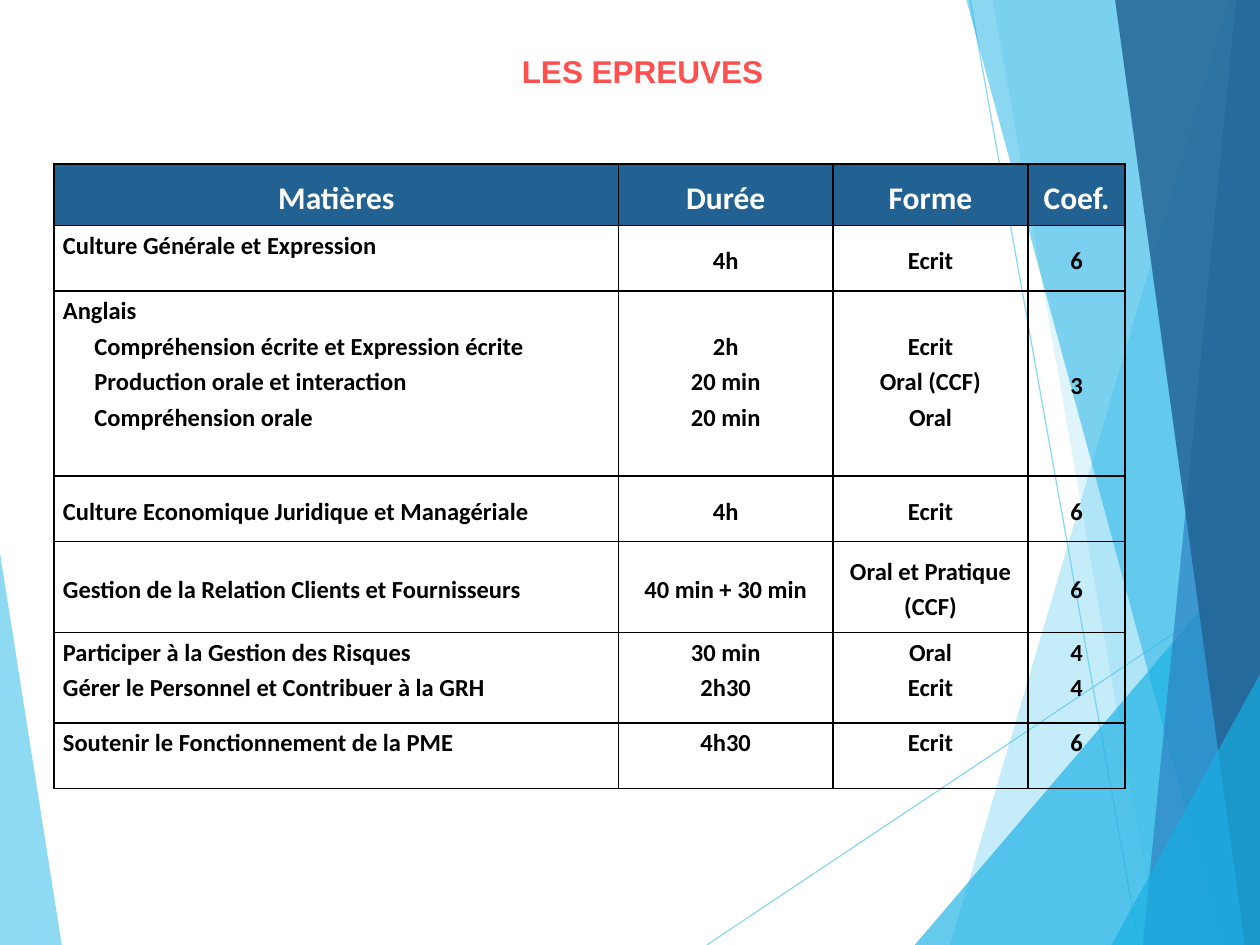
from collections import namedtuple
from dataclasses import dataclass

from pptx import Presentation
from pptx import util as u
from pptx.dml.color import RGBColor
from pptx.enum import shapes, text
from pptx.oxml.ns import qn
from lxml import etree

COLUMNS, ROWS = 100, 75
Box = namedtuple("Box", "left top width height")


@dataclass(frozen=True)
class Theme:
    """Hold the colours, fonts and type sizes of the slide."""
    sky: str = "5FCBEF"
    cyan: str = "17B0E4"
    blue: str = "2E83C3"
    navy: str = "226292"
    red: str = "FF5050"
    black: str = "000000"
    white: str = "FFFFFF"
    title_font: str = "Arial"
    table_font: str = "Calibri"
    large: int = 18
    body: int = 14
    hairline: float = 0.75
    border: float = 1
    line_spacing: float = 1.19


THEME = Theme()

FACETS = [
    (THEME.sky, 70, [(0, 43.9), (4.9, 75), (0, 75)]),
    (THEME.sky, 36, [(97.5, 0), (75.4, 75), (100, 75), (100, 0)]),
    (THEME.sky, 20, [(78.8, 0), (91.9, 75), (100, 75), (100, 0)]),
    (THEME.cyan, 66, [(72.6, 75), (100, 42.9), (100, 75)]),
    (THEME.cyan, 50, [(76.7, 0), (97, 75), (100, 75), (100, 0)]),
    (THEME.blue, 70, [(98.1, 0), (90.7, 75), (100, 75), (100, 0)]),
    (THEME.navy, 82, [(88.5, 0), (98.8, 75), (100, 75), (100, 0)]),
    (THEME.cyan, 66, [(88.2, 75), (100, 53.5), (100, 75)]),
]
RAYS = [((56.1, 75), (100, 45.7)), ((77, 0), (90.4, 75))]

COLUMN_WIDTHS = [4.48, 1.7, 1.55, 0.77]
ROW_HEIGHTS = [0.49, 0.52, 1.47, 0.52, 0.72, 0.72, 0.52]
TOP, MIDDLE = text.MSO_ANCHOR.TOP, text.MSO_ANCHOR.MIDDLE
HEADINGS = ["Matières", "Durée", "Forme", "Coef."]
EXAMS = [
    (["Culture Générale et Expression", "4h", "Ecrit", "6"], [TOP, MIDDLE, MIDDLE, MIDDLE]),
    (["Anglais\nCompréhension écrite et Expression écrite\n"
      "Production orale et interaction\nCompréhension orale",
      "2h\n20 min\n20 min", "Ecrit\nOral (CCF)\nOral", "3"], [TOP, TOP, TOP, MIDDLE]),
    (["Culture Economique Juridique et Managériale", "4h", "Ecrit", "6"], [MIDDLE] * 4),
    (["Gestion de la Relation Clients et Fournisseurs", "40 min + 30 min",
      "Oral et Pratique\n(CCF)", "6"], [MIDDLE] * 4),
    (["Participer à la Gestion des Risques\nGérer le Personnel et Contribuer à la GRH",
      "30 min\n2h30", "Oral\nEcrit", "4\n4"], [TOP] * 4),
    (["Soutenir le Fonctionnement de la PME", "4h30", "Ecrit", "6"], [TOP] * 4),
]
ENGLISH_ROW = 2
ENGLISH_LINE = 0.28


def grid_box(presentation, left, top, width, height):
    """Turn grid columns and rows into a box in slide units."""
    column, row = presentation.slide_width / COLUMNS, presentation.slide_height / ROWS
    return Box(round(left * column), round(top * row), round(width * column), round(height * row))


def place_in(box, point):
    """Return the position of a grid point inside the box."""
    return (round(box.left + point[0] * box.width / COLUMNS),
            round(box.top + point[1] * box.height / ROWS))


def set_font(paragraph, name, size, colour):
    """Give a paragraph its bold font."""
    font = paragraph.font
    font.name, font.size, font.bold = name, u.Pt(size), True
    font.color.rgb = RGBColor.from_string(colour)


def set_opacity(fill_parent, percent):
    """Make the solid colour below an element partly transparent."""
    colour = next(fill_parent.iter(qn("a:srgbClr")))
    etree.SubElement(colour, qn("a:alpha"), val=str(percent * 1000))


def draw_facet(slide, box, colour, opacity, points):
    """Draw one translucent polygon."""
    corners = [place_in(box, point) for point in points]
    builder = slide.shapes.build_freeform(*corners[0])
    builder.add_line_segments(corners[1:], close=True)
    facet = builder.convert_to_shape()
    facet.shadow.inherit = False
    facet.fill.solid()
    facet.fill.fore_color.rgb = RGBColor.from_string(colour)
    facet.line.fill.background()
    set_opacity(facet.fill._xPr, opacity)


def draw_ray(slide, box, start, end):
    """Draw one thin translucent line."""
    ray = slide.shapes.add_connector(
        shapes.MSO_CONNECTOR.STRAIGHT, *place_in(box, start), *place_in(box, end))
    ray.line.width = u.Pt(THEME.hairline)
    ray.line.color.rgb = RGBColor.from_string(THEME.sky)
    properties = ray._element.spPr
    set_opacity(properties, 70)
    etree.SubElement(properties, qn("a:effectLst"))


def draw_backdrop(slide, box):
    """Draw the left facet, the rays and the right facets."""
    draw_facet(slide, box, *FACETS[0])
    for start, end in RAYS:
        draw_ray(slide, box, start, end)
    for facet in FACETS[1:]:
        draw_facet(slide, box, *facet)


def place_title(slide, box):
    """Move and format the title placeholder."""
    title = slide.shapes.title
    title.left, title.top, title.width, title.height = box
    frame = title.text_frame
    frame.text = "LES EPREUVES"
    frame.word_wrap = False
    frame.auto_size = text.MSO_AUTO_SIZE.SHAPE_TO_FIT_TEXT
    paragraph = frame.paragraphs[0]
    paragraph.alignment = text.PP_ALIGN.CENTER
    set_font(paragraph, THEME.title_font, THEME.large, THEME.red)


def draw_borders(cell):
    """Draw the four borders of a cell."""
    properties = cell._tc.get_or_add_tcPr()
    for side in ("lnL", "lnR", "lnT", "lnB"):
        line = etree.SubElement(properties, qn(f"a:{side}"), w=str(u.Pt(THEME.border)))
        fill = etree.SubElement(line, qn("a:solidFill"))
        etree.SubElement(fill, qn("a:srgbClr"), val=THEME.black)


def fill_cell(cell, words, anchor, centred, heading):
    """Write and format one cell."""
    draw_borders(cell)
    if heading:
        cell.fill.solid()
        cell.fill.fore_color.rgb = RGBColor.from_string(THEME.navy)
    else:
        cell.fill.background()
    cell.margin_left = cell.margin_right = u.Inches(0.07)
    cell.margin_top = cell.margin_bottom = 0
    cell.vertical_anchor = anchor
    cell.text = words
    size, colour = (THEME.large, THEME.white) if heading else (THEME.body, THEME.black)
    for paragraph in cell.text_frame.paragraphs:
        paragraph.alignment = text.PP_ALIGN.CENTER if centred else text.PP_ALIGN.LEFT
        paragraph.line_spacing = THEME.line_spacing
        set_font(paragraph, THEME.table_font, size, colour)


def align_english_parts(table):
    """Indent the parts of the English exam and level the other columns with them."""
    for paragraph in table.cell(ENGLISH_ROW, 0).text_frame.paragraphs[1:]:
        properties = paragraph._p.get_or_add_pPr()
        properties.set("marL", str(u.Inches(0.5)))
        properties.set("indent", str(u.Inches(-0.25)))
    for column in (1, 2):
        table.cell(ENGLISH_ROW, column).margin_top = u.Inches(ENGLISH_LINE)


def draw_exam_table(slide, box):
    """Draw the table of exams in the box."""
    table = slide.shapes.add_table(len(ROW_HEIGHTS), len(COLUMN_WIDTHS), *box).table
    table.first_row = table.horz_banding = False
    for column, share in zip(table.columns, COLUMN_WIDTHS):
        column.width = round(box.width * share / sum(COLUMN_WIDTHS))
    for row, share in zip(table.rows, ROW_HEIGHTS):
        row.height = round(box.height * share / sum(ROW_HEIGHTS))
    for row, (entries, anchors) in enumerate([(HEADINGS, [MIDDLE] * 4)] + EXAMS):
        for column, (words, anchor) in enumerate(zip(entries, anchors)):
            heading = row == 0
            fill_cell(table.cell(row, column), words, anchor, heading or column > 0, heading)
    align_english_parts(table)


def main():
    """Build and save the slide."""
    presentation = Presentation()
    presentation.slide_width, presentation.slide_height = u.Inches(10), u.Inches(7.5)
    slide = presentation.slides.add_slide(presentation.slide_layouts[5])
    draw_backdrop(slide, grid_box(presentation, 0, 0, COLUMNS, ROWS))
    place_title(slide, grid_box(presentation, 40.3, 3.6, 21.4, 4))
    draw_exam_table(slide, grid_box(presentation, 4.3, 13, 85, 49.6))
    presentation.save("out.pptx")


if __name__ == "__main__":
    main()
